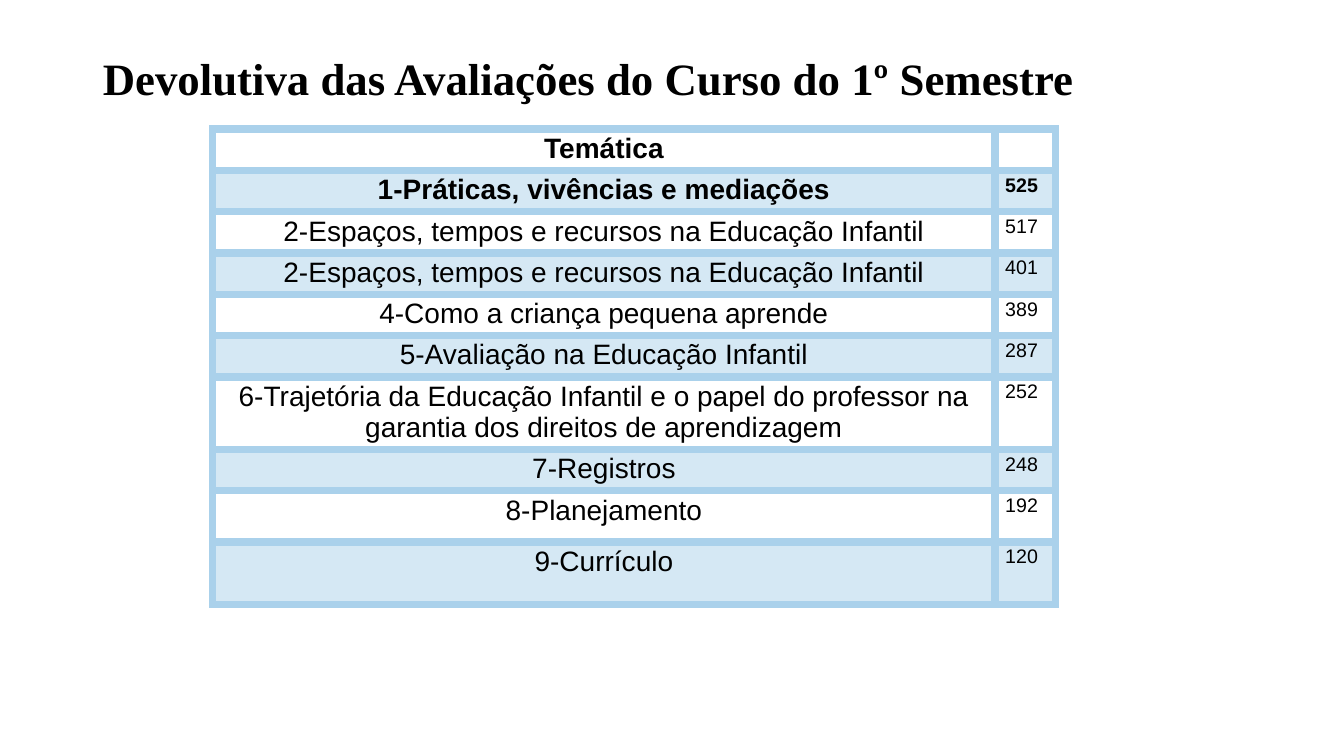
from dataclasses import dataclass

from lxml import etree
from pptx import Presentation
from pptx.dml.color import RGBColor
from pptx.enum.text import MSO_ANCHOR, MSO_AUTO_SIZE, PP_ALIGN
from pptx.oxml.ns import qn
from pptx.slide import Slide
from pptx.table import _Cell
from pptx.text.text import _Paragraph
from pptx.util import Inches, Pt

LEFT, CENTER = PP_ALIGN.LEFT, PP_ALIGN.CENTER
BOTTOM = MSO_ANCHOR.BOTTOM
NO_AUTOFIT = MSO_AUTO_SIZE.NONE


@dataclass(frozen=True)
class Theme:
    text: str = "000000"
    border: str = "AAD1EB"
    band: str = "318DCB"
    band_opacity: int = 20
    border_width: int = 6
    title_font: str = "Times New Roman"
    table_font: str = "Arial"
    title_size: int = 32
    topic_size: int = 20
    count_size: int = 14


@dataclass(frozen=True)
class TopicRow:
    topic: str
    count: str
    height: float = 0.41
    bold: bool = False


THEME = Theme()
TITLE = "Devolutiva das Avaliações do Curso do 1º Semestre"
COLUMN_WIDTHS = (7.76, 0.6)
TOPIC_ROWS = (
    TopicRow("Temática", "", bold=True),
    TopicRow("1-Práticas, vivências e mediações", "525", bold=True),
    TopicRow("2-Espaços, tempos e recursos na Educação Infantil", "517"),
    TopicRow("2-Espaços, tempos e recursos na Educação Infantil", "401"),
    TopicRow("4-Como a criança pequena aprende", "389"),
    TopicRow("5-Avaliação na Educação Infantil", "287"),
    TopicRow("6-Trajetória da Educação Infantil e o papel do professor na "
             "garantia dos direitos de aprendizagem", "252", height=0.72),
    TopicRow("7-Registros", "248"),
    TopicRow("8-Planejamento", "192", height=0.51),
    TopicRow("9-Currículo", "120", height=0.62),
)


def format_paragraph(paragraph: _Paragraph, font_name: str, size: int,
                     bold: bool, align: PP_ALIGN) -> None:
    paragraph.alignment = align
    for run in paragraph.runs:
        run.font.name = font_name
        run.font.size = Pt(size)
        run.font.bold = bold
        run.font.color.rgb = RGBColor.from_string(THEME.text)


def add_title(slide: Slide) -> None:
    title = slide.shapes.title
    title.left, title.top = Inches(0.92), Inches(0.4)
    title.width, title.height = Inches(10.75), Inches(0.69)
    frame = title.text_frame
    frame.text = TITLE
    frame.word_wrap = True
    frame.auto_size = NO_AUTOFIT
    frame.vertical_anchor = BOTTOM
    paragraph = frame.paragraphs[0]
    paragraph.line_spacing = 0.9
    format_paragraph(paragraph, THEME.title_font, THEME.title_size, True, LEFT)


def add_borders(cell: _Cell) -> None:
    properties = cell._tc.get_or_add_tcPr()
    for position, side in enumerate(("a:lnL", "a:lnR", "a:lnT", "a:lnB")):
        line = etree.Element(qn(side), w=str(Pt(THEME.border_width)))
        fill = etree.SubElement(line, qn("a:solidFill"))
        etree.SubElement(fill, qn("a:srgbClr"), val=THEME.border)
        properties.insert(position, line)


def fill_cell(cell: _Cell, banded: bool) -> None:
    if not banded:
        cell.fill.background()
        return
    cell.fill.solid()
    cell.fill.fore_color.rgb = RGBColor.from_string(THEME.band)
    color = cell._tc.tcPr.find(f"{qn('a:solidFill')}/{qn('a:srgbClr')}")
    etree.SubElement(color, qn("a:alpha"), val=str(THEME.band_opacity * 1000))


def write_cell(cell: _Cell, text: str, size: int, bold: bool,
               align: PP_ALIGN, banded: bool) -> None:
    cell.margin_left = cell.margin_right = Inches(0.1)
    cell.margin_top = cell.margin_bottom = Inches(0.04)
    cell.text_frame.text = text
    format_paragraph(cell.text_frame.paragraphs[0], THEME.table_font,
                     size, bold, align)
    fill_cell(cell, banded)
    add_borders(cell)


def add_topic_table(slide: Slide) -> None:
    table = slide.shapes.add_table(
        len(TOPIC_ROWS), len(COLUMN_WIDTHS), Inches(2.11), Inches(1.28),
        Inches(sum(COLUMN_WIDTHS)),
        Inches(sum(row.height for row in TOPIC_ROWS))).table
    table.first_row = table.horz_banding = False
    for column, width in zip(table.columns, COLUMN_WIDTHS):
        column.width = Inches(width)
    for index, row in enumerate(TOPIC_ROWS):
        table.rows[index].height = Inches(row.height)
        banded = index % 2 == 1
        write_cell(table.cell(index, 0), row.topic, THEME.topic_size,
                   row.bold, CENTER, banded)
        write_cell(table.cell(index, 1), row.count, THEME.count_size,
                   row.bold, LEFT, banded)


def main() -> None:
    presentation = Presentation()
    presentation.slide_width = Inches(13.33)
    presentation.slide_height = Inches(7.5)
    title_only = presentation.slide_layouts.get_by_name("Title Only")
    slide = presentation.slides.add_slide(title_only)
    add_title(slide)
    add_topic_table(slide)
    presentation.save("out.pptx")


if __name__ == "__main__":
    main()
